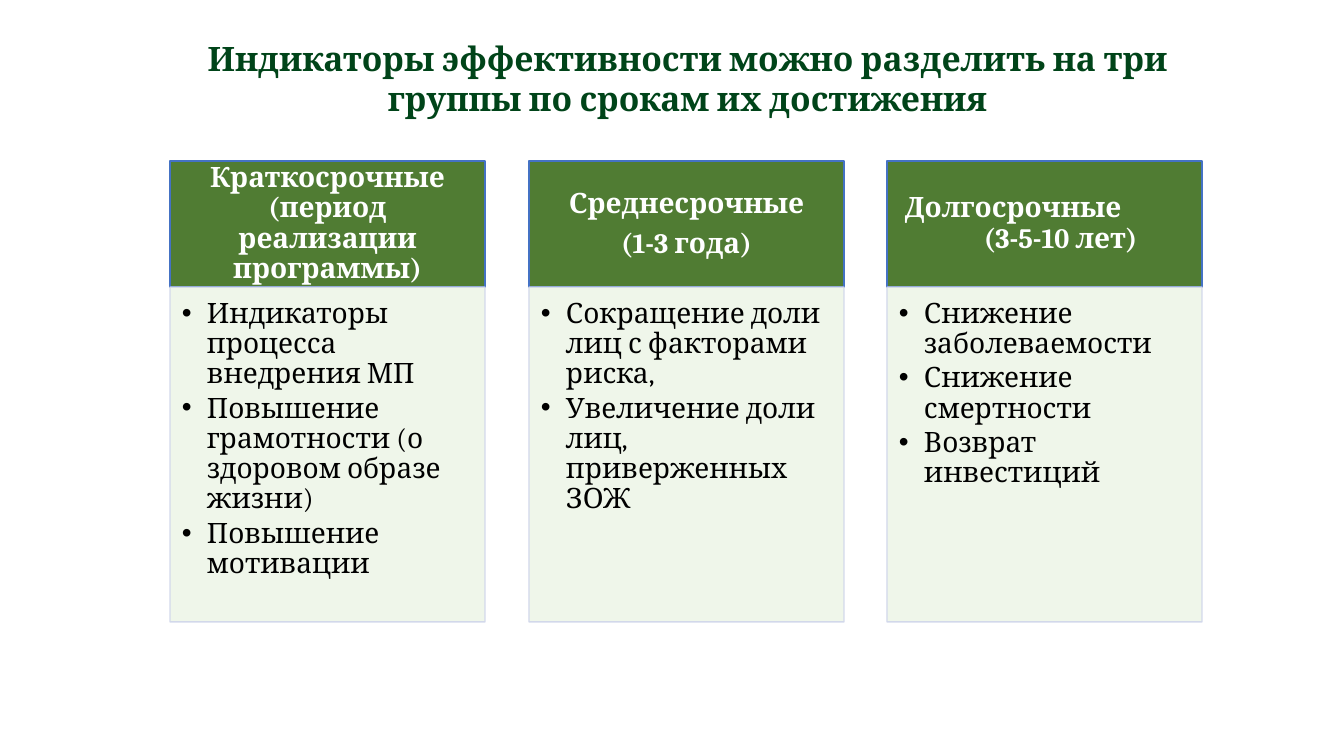
import pptx
import pptx.util
import pptx.dml.color
import pptx.enum.shapes
import pptx.enum.text
import pptx.oxml
import pptx.oxml.ns
import lxml.etree

Pt = pptx.util.Pt
RGB = pptx.dml.color.RGBColor.from_string
Align = pptx.enum.text.PP_ALIGN
Anchor = pptx.enum.text.MSO_ANCHOR
qn = pptx.oxml.ns.qn

THEME = {
    "font": "Cambria",
    "title": {"size": Pt(24), "bold": True, "color": "004419"},
    "heading": {"size": Pt(20), "bold": True, "color": "FFFFFF"},
    "item": {"size": Pt(20), "bold": False, "color": "000000"},
    "heading_fill": "507C33", "heading_line": "4472C4",
    "list_fill": "EEF6E8", "list_line": "CFD5EA", "list_alpha": 90000,
}


def px(length):
    """Turn px, 100.8 to the inch, into EMU."""
    return round(length * 914400 / 100.8)


def write(box, paragraphs, style, anchor, insets, **layout):
    """Fill a box with paragraphs in one text style and paragraph layout."""
    frame = box.text_frame
    frame.text = "\n".join(paragraphs)
    margins = dict(zip(("margin_left", "margin_top", "margin_right", "margin_bottom"), map(px, insets)))
    settings = {"word_wrap": True, "auto_size": pptx.enum.text.MSO_AUTO_SIZE.NONE,
                "vertical_anchor": anchor, **margins}
    for key, value in settings.items():
        setattr(frame, key, value)
    for paragraph in frame.paragraphs:
        for key, value in {"space_before": Pt(0), **layout}.items():
            setattr(paragraph, key, value)
        for run in paragraph.runs:
            run.font.name = THEME["font"]
            run.font.size = THEME[style]["size"]
            run.font.bold = THEME[style]["bold"]
            run.font.color.rgb = RGB(THEME[style]["color"])


GROUPS = [
    (["Краткосрочные (период реализации программы)"],
     ["Индикаторы процесса внедрения МП",
      "Повышение грамотности (о здоровом образе жизни)",
      "Повышение мотивации"]),
    (["Среднесрочные", "(1-3 года)"],
     ["Сокращение доли лиц с факторами риска,",
      "Увеличение доли лиц, приверженных ЗОЖ"]),
    (["Долгосрочные\v(3-5-10 лет)"],
     ["Снижение заболеваемости", "Снижение смертности", "Возврат инвестиций"]),
]
LEFT, TOP, WIDTH = 170, 161, 315
TWO_STEPS = 717  # distance from the first column to the third
HEADING_HEIGHT, LIST_HEIGHT = 126, 335

deck = pptx.Presentation()
deck.slide_width, deck.slide_height = px(1344), px(756)
slide = deck.slides.add_slide(deck.slide_layouts.get_by_name("Comparison"))

title = slide.shapes.title
title.left, title.top, title.width, title.height = map(px, (155, 32, 1065, 92))
write(title, ["Индикаторы эффективности можно разделить на три группы по срокам их достижения"],
      "title", Anchor.MIDDLE, (10, 5, 10, 5), alignment=Align.CENTER)

*lists, spare = [holder for holder in slide.placeholders if holder.placeholder_format.idx > 0]
spare.element.getparent().remove(spare.element)

for column, (indicators, (term, items)) in enumerate(zip(lists, GROUPS)):
    left = LEFT + (TWO_STEPS * column + 1) // 2

    heading = slide.shapes.add_shape(pptx.enum.shapes.MSO_SHAPE.RECTANGLE,
                                     *map(px, (left, TOP, WIDTH, HEADING_HEIGHT)))
    heading.shadow.inherit = False
    write(heading, term, "heading", Anchor.MIDDLE, (16, 9, 16, 9),
          alignment=Align.CENTER, line_spacing=0.9, space_after=Pt(7))
    indicators.element.addprevious(heading.element)

    indicators.left, indicators.top, indicators.width, indicators.height = map(
        px, (left, TOP + HEADING_HEIGHT, WIDTH, LIST_HEIGHT))
    write(indicators, items, "item", Anchor.TOP, (12, 12, 16, 17),
          level=1, alignment=Align.LEFT, line_spacing=0.9, space_after=Pt(3))
    for paragraph in indicators.text_frame.paragraphs:
        properties = paragraph._p.get_or_add_pPr()
        properties.set("marL", str(px(25)))
        properties.set("indent", str(px(-25)))
        lxml.etree.SubElement(properties, qn("a:buFont")).set("typeface", "Arial")
        lxml.etree.SubElement(properties, qn("a:buChar")).set("char", "•")

    for part, kind in ((heading, "heading"), (indicators, "list")):
        part.fill.solid()
        part.fill.fore_color.rgb = RGB(THEME[kind + "_fill"])
        part.line.color.rgb = RGB(THEME[kind + "_line"])
        part.line.width = Pt(1)
    for color in list(indicators.element.spPr.iter(qn("a:srgbClr"))):
        lxml.etree.SubElement(color, qn("a:alpha")).set("val", str(THEME["list_alpha"]))

# The last heading steps its second line to the right with a hanging indent.
long_term = heading.text_frame.paragraphs[0]
long_term.alignment = Align.LEFT
long_term._p.get_or_add_pPr().set("marL", str(px(81)))
long_term._p.get_or_add_pPr().set("indent", str(px(-79)))

deck.save("out.pptx")
